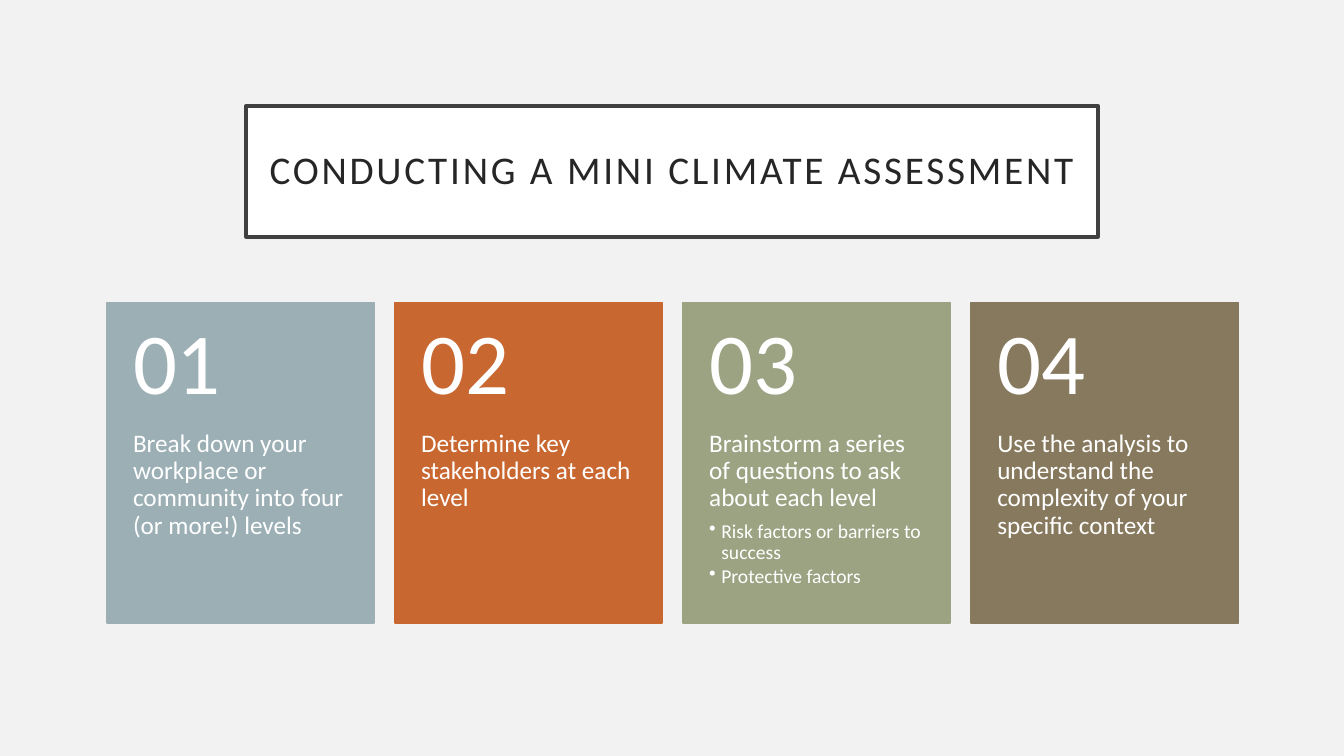
from lxml.etree import SubElement
from pptx import Presentation
from pptx.dml.color import RGBColor
from pptx.enum.shapes import MSO_SHAPE as Shape
from pptx.enum.text import MSO_ANCHOR as Anchor, MSO_AUTO_SIZE as Fit, PP_ALIGN as Align
from pptx.oxml.ns import qn
from pptx.util import Inches, Pt

FONT = "Calibri"
PAPER = RGBColor(0xF2, 0xF2, 0xF2)
WHITE = RGBColor(0xFF, 0xFF, 0xFF)
FRAME = RGBColor(0x40, 0x40, 0x40)
INK = RGBColor(0x26, 0x26, 0x26)
BLUE = RGBColor(0x9B, 0xAF, 0xB5)
RUST = RGBColor(0xC9, 0x67, 0x31)
SAGE = RGBColor(0x9C, 0xA3, 0x83)
BROWN = RGBColor(0x87, 0x79, 0x5D)

# Card grid, in inches
LEFT, TOP, STEP = 1.06, 3, 2.857
WIDTH, HEIGHT = 2.65, 3.18
HEAD = HEIGHT * 0.4
PAD = 0.26

TITLE = "CONDUCTING A MINI CLIMATE ASSESSMENT"
CARDS = [
    (BLUE, "Break down your workplace or community into four (or more!) levels", []),
    (RUST, "Determine key stakeholders at each level", []),
    (SAGE, "Brainstorm a series of questions to ask about each level",
     ["Risk factors or barriers to success", "Protective factors"]),
    (BROWN, "Use the analysis to understand the complexity of your specific context", []),
]


def box(*sides):
    return [Inches(side) for side in sides]


def set_frame(frame, anchor, *pads):
    frame.word_wrap = True
    frame.auto_size = Fit.NONE
    frame.vertical_anchor = anchor
    (frame.margin_left, frame.margin_top,
     frame.margin_right, frame.margin_bottom) = box(*pads)


def set_text(para, text, size, color, after=0):
    para.text = text
    para.line_spacing = 0.9
    para.space_after = Pt(after)
    font = para.font
    font.name, font.size, font.color.rgb = FONT, Pt(size), color


def add_dot(para):
    para.level = 1
    props = para._p.get_or_add_pPr()
    props.set("marL", str(Inches(0.12)))
    props.set("indent", str(-Inches(0.12)))
    # The bullet goes before the default run properties
    dot = SubElement(props, qn("a:buChar"), char="•")
    props.find(qn("a:defRPr")).addprevious(dot)


def add_title(slide):
    title = slide.shapes.title
    title.left, title.top, title.width, title.height = box(2.44, 1.05, 8.45, 1.3)
    title.fill.solid()
    title.fill.fore_color.rgb = WHITE
    title.line.color.rgb = FRAME
    title.line.width = Pt(2.5)
    set_frame(title.text_frame, Anchor.MIDDLE, 0.2, 0.2, 0.2, 0.2)
    para = title.text_frame.paragraphs[0]
    set_text(para, TITLE, 28, INK)
    para.alignment = Align.CENTER
    # Letter spacing, in hundredths of a point
    para.runs[0]._r.get_or_add_rPr().set("spc", "200")


def add_card(slide, index, color, text, points):
    left = LEFT + index * STEP
    group = slide.shapes.add_group_shape().shapes

    # Coloured panel
    panel = group.add_shape(Shape.RECTANGLE, *box(left, TOP, WIDTH, HEIGHT))
    panel.shadow.inherit = False
    panel.fill.solid()
    panel.fill.fore_color.rgb = color
    panel.line.color.rgb = color
    panel.line.width = Pt(1)

    # Step text with its points
    body = group.add_textbox(*box(left, TOP + HEAD, WIDTH, HEIGHT - HEAD)).text_frame
    set_frame(body, Anchor.TOP, PAD, 0, PAD, 0.36)
    set_text(body.paragraphs[0], text, 18, WHITE, 6.3)
    for point in points:
        para = body.add_paragraph()
        set_text(para, point, 14, WHITE, 2.1)
        add_dot(para)

    # Step number
    label = group.add_textbox(*box(left, TOP, WIDTH, HEAD)).text_frame
    set_frame(label, Anchor.MIDDLE, PAD, 0.18, PAD, 0.18)
    set_text(label.paragraphs[0], f"{index + 1:02}", 62, WHITE, 21.7)


def main():
    deck = Presentation()
    deck.slide_width, deck.slide_height = box(13.33, 7.5)
    slide = deck.slides.add_slide(deck.slide_layouts[5])
    slide.background.fill.solid()
    slide.background.fill.fore_color.rgb = PAPER
    add_title(slide)
    for index, card in enumerate(CARDS):
        add_card(slide, index, *card)
    deck.save("out.pptx")


if __name__ == "__main__":
    main()
